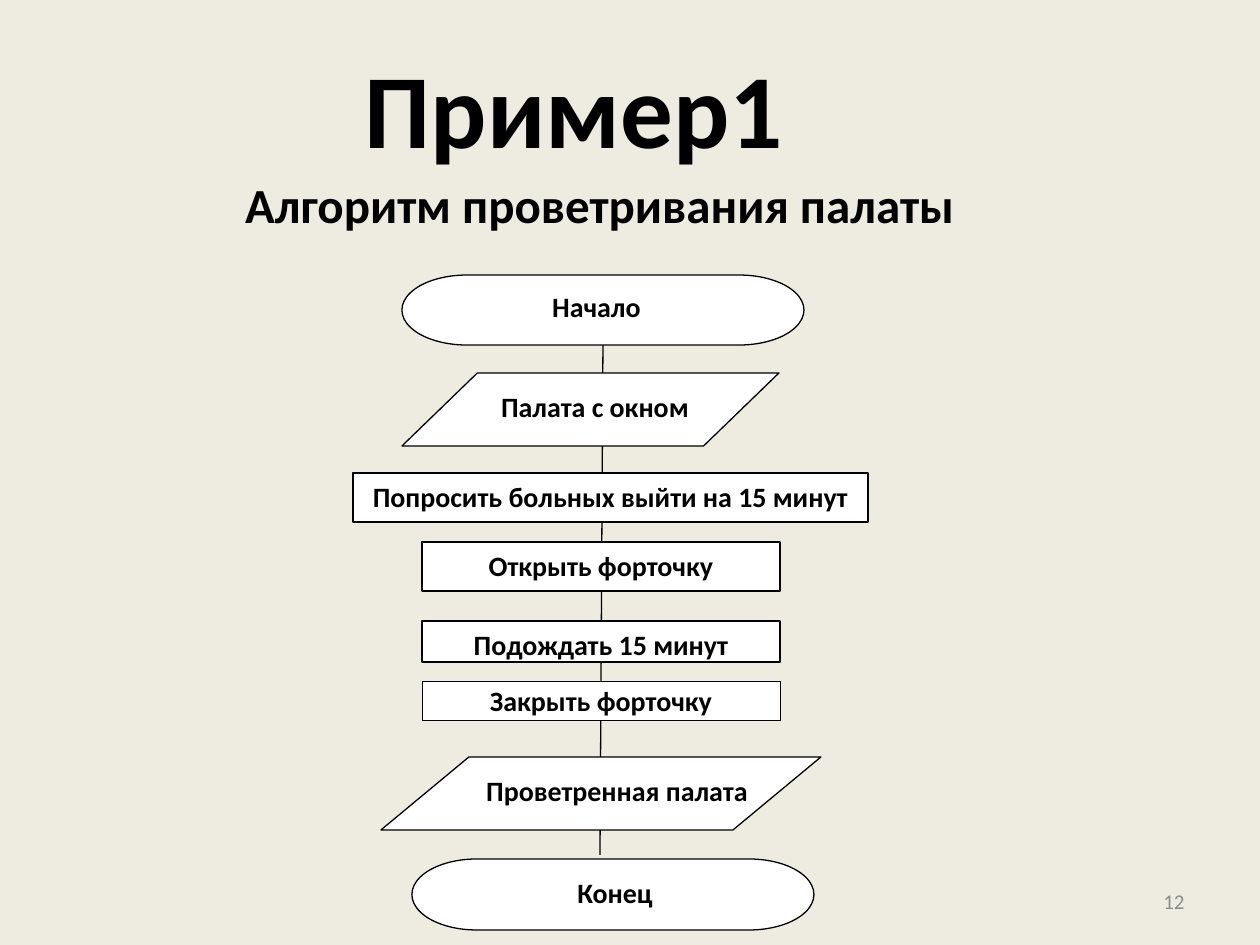
from lxml.etree import SubElement
from pptx import Presentation
from pptx.dml.color import RGBColor
from pptx.enum.shapes import MSO_CONNECTOR, MSO_SHAPE as Shape
from pptx.enum.text import MSO_ANCHOR as Anchor, PP_ALIGN as Align
from pptx.oxml.ns import qn
from pptx.util import Pt

EMU_PER_PX = 914400 / 126
FONT = "Calibri"
COLORS = {"page": "EEECE1", "ink": "000000", "box": "FFFFFF", "number": "8C8C8C"}


def px(length):
    """Turn pixels into whole EMU."""
    return round(length * EMU_PER_PX)


def color(name):
    """Look up a palette colour."""
    return RGBColor.from_string(COLORS[name])


def write(holder, words, size, bold=True, ink="ink", align=Align.CENTER, anchor=Anchor.TOP):
    """Put one styled paragraph into a shape or text box."""
    frame = holder.text_frame
    frame.word_wrap = True
    frame.vertical_anchor = anchor
    paragraph = frame.paragraphs[0]
    paragraph.alignment = align
    run = paragraph.add_run()
    run.text = words
    run.font.name = FONT
    run.font.size = Pt(size)
    run.font.bold = bold
    run.font.color.rgb = color(ink)


def add_label(slide, bounds, words, size=16, **style):
    """Add a text box holding one paragraph."""
    label = slide.shapes.add_textbox(*map(px, bounds))
    write(label, words, size, **style)


def add_block(slide, kind, bounds, weight=0.75):
    """Add a white outlined flowchart block."""
    block = slide.shapes.add_shape(kind, *map(px, bounds))
    block.shadow.inherit = False
    block.fill.solid()
    block.fill.fore_color.rgb = color("box")
    block.line.color.rgb = color("ink")
    block.line.width = Pt(weight)
    return block


def add_step(slide, bounds, words, weight=1, anchor=Anchor.TOP):
    """Add a rectangular action with its wording."""
    step = add_block(slide, Shape.RECTANGLE, bounds, weight)
    write(step, words, 16, anchor=anchor)


def add_flow_line(slide, start, end):
    """Add the thin line that runs behind all blocks."""
    flow = slide.shapes.add_connector(MSO_CONNECTOR.STRAIGHT, *map(px, start + end))
    flow.line.color.rgb = color("ink")
    flow.line.width = Pt(0.75)
    SubElement(flow._element.spPr, qn("a:effectLst"))
    return flow


def main():
    """Build the ventilation algorithm slide."""
    deck = Presentation()
    deck.slide_width, deck.slide_height = px(1260), px(945)
    slide = deck.slides.add_slide(deck.slide_layouts[6])
    slide.background.fill.solid()
    slide.background.fill.fore_color.rgb = color("page")

    add_label(slide, (54, 66, 1040, 81), "Пример1", 60, anchor=Anchor.MIDDLE)
    add_label(slide, (88, 168, 1023, 72), "Алгоритм проветривания палаты", 28)

    flow = add_flow_line(slide, (603, 345), (600, 855))
    start = add_block(slide, Shape.FLOWCHART_TERMINATOR, (402, 275, 402, 70))
    flow.begin_connect(start, 2)
    add_label(slide, (451, 283, 291, 54), "Начало")

    data_blocks = [
        ((402, 373, 377, 73), (416, 383, 358, 74), "Палата с окном"),
        ((381, 757, 440, 73), (438, 767, 358, 38), "Проветренная палата"),
    ]
    for outline, label, words in data_blocks:
        add_block(slide, Shape.FLOWCHART_DATA, outline)
        add_label(slide, label, words)

    add_step(slide, (353, 473, 515, 49), "Попросить больных выйти на 15 минут")
    add_step(slide, (422, 542, 358, 49), "Открыть форточку")
    add_step(slide, (422, 621, 358, 41), "Подождать 15 минут")
    add_step(slide, (422, 681, 358, 39), "Закрыть форточку", 0.25, Anchor.MIDDLE)

    add_block(slide, Shape.FLOWCHART_TERMINATOR, (412, 859, 402, 71))
    add_label(slide, (469, 869, 292, 54), "Конец")
    add_label(slide, (903, 876, 294, 50), "12", 12, bold=False, ink="number",
              align=Align.RIGHT, anchor=Anchor.MIDDLE)
    deck.save("out.pptx")


if __name__ == "__main__":
    main()
